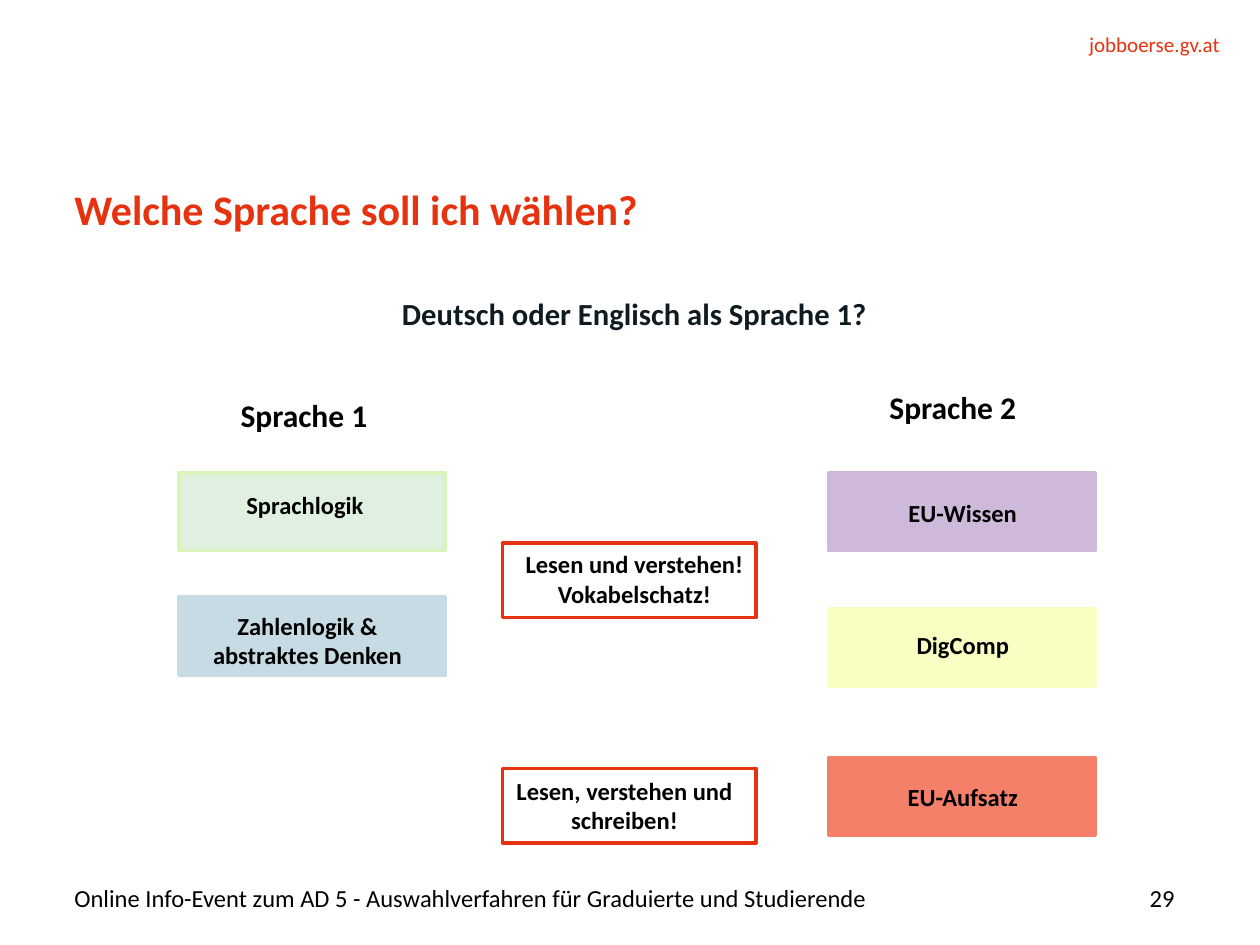
from pptx import Presentation
from pptx.dml.color import RGBColor
from pptx.enum.shapes import MSO_SHAPE
from pptx.enum.text import MSO_ANCHOR, MSO_AUTO_SIZE, PP_ALIGN
from pptx.util import Cm, Pt

RED, BLACK = "E6320F", "000000"
LEFT, CENTER, RIGHT = PP_ALIGN.LEFT, PP_ALIGN.CENTER, PP_ALIGN.RIGHT


def rgb(color):
    return RGBColor.from_string(color)


def put_text(sp, text, size, color=BLACK, bold=True, align=LEFT, inset=True,
             anchor=MSO_ANCHOR.TOP, grow=False):
    tf = sp.text_frame
    frame = {"word_wrap": True, "vertical_anchor": anchor,
             "auto_size": MSO_AUTO_SIZE.SHAPE_TO_FIT_TEXT if grow else MSO_AUTO_SIZE.NONE}
    if not inset:
        frame.update({f"margin_{side}": 0 for side in ("left", "top", "right", "bottom")})
    for name, value in frame.items():
        setattr(tf, name, value)
    tf.text = text
    for p in tf.paragraphs:
        p.alignment = align
        for r in p.runs:
            for name, value in {"name": "Calibri", "size": Pt(size), "bold": bold}.items():
                setattr(r.font, name, value)
            r.font.color.rgb = rgb(color)
    return tf


prs = Presentation()
prs.slide_width, prs.slide_height = Cm(25.4), Cm(19.05)
s = prs.slides.add_slide(prs.slide_layouts[5])

# Title
title = s.shapes.title
title.left, title.top, title.width, title.height = Cm(1.5), Cm(3.66), Cm(22.17), Cm(2.31)
tf = put_text(title, "Welche Sprache soll ich wählen?", 24, RED, inset=False)
tf.paragraphs[0].line_spacing = Pt(30)

# Header and footer
for text, x, y, w, h, size, color, align, anchor in [
    ("jobboerse.gv.at", 18.47, 0.64, 6.12, 0.51, 12, RED, RIGHT, MSO_ANCHOR.TOP),
    ("29", 21.01, 17.73, 2.67, 0.74, 14, BLACK, RIGHT, MSO_ANCHOR.MIDDLE),
    ("Online Info-Event zum AD 5 - Auswahlverfahren für Graduierte und Studierende",
     1.5, 17.73, 19.1, 0.74, 14, BLACK, LEFT, MSO_ANCHOR.MIDDLE),
]:
    sp = s.shapes.add_textbox(Cm(x), Cm(y), Cm(w), Cm(h))
    put_text(sp, text, size, color, False, align, inset=False, anchor=anchor)

# Question, in the first of two text columns
sp = s.shapes.add_textbox(Cm(7.9), Cm(5.94), Cm(19.58), Cm(1.5))
tf = put_text(sp, "Deutsch oder Englisch als Sprache 1?", 17.5, "0F1B20", align=CENTER,
              inset=False)
tf.paragraphs[0].space_after = Pt(14.2)
tf._txBody.bodyPr.set("numCol", "2")

# Column headings
for text, x, y in [("Sprache 1", 4.6, 7.85), ("Sprache 2", 17.68, 7.7)]:
    put_text(s.shapes.add_textbox(Cm(x), Cm(y), Cm(7.47), Cm(1.02)), text, 18, grow=True)

# Test boxes and outlined hints
TEST, HINT = (5.36, 1.57), (5.11, 1.5)
for x, y, (w, h), fill, line in [
    (3.61, 9.53, TEST, "DFF0E0", "D9F4BA"),
    (3.61, 12.04, TEST, "C6DBE4", "C6DBE4"),
    (16.71, 9.53, TEST, "CEB9DB", "CEB9DB"),
    (16.71, 12.27, TEST, "F9FFC2", "F9FFC2"),
    (16.71, 15.27, TEST, "F5806A", "F5806A"),
    (10.13, 10.95, HINT, None, RED),
    (10.13, 15.49, HINT, None, RED),
]:
    sp = s.shapes.add_shape(MSO_SHAPE.RECTANGLE, Cm(x), Cm(y), Cm(w), Cm(h))
    sp.shadow.inherit = False
    if fill:
        sp.fill.solid()
        sp.fill.fore_color.rgb = rgb(fill)
    else:
        sp.fill.background()
    sp.line.color.rgb = rgb(line)
    sp.line.width = Pt(2.08)

# Labels on the boxes
for text, x, y, w, h in [
    ("Sprachlogik", 3.94, 9.75, 4.42, 0.86),
    ("Zahlenlogik & abstraktes Denken", 3.99, 12.19, 4.42, 1.45),
    ("EU-Wissen", 17.2, 9.91, 4.42, 0.86),
    ("DigComp", 17.2, 12.57, 4.42, 0.86),
    ("EU-Aufsatz", 17.2, 15.65, 4.42, 0.86),
    ("Lesen und verstehen!\nVokabelschatz!", 9.5, 10.95, 6.58, 1.45),
    ("Lesen, verstehen und schreiben!", 9.3, 15.52, 6.58, 1.45),
]:
    sp = s.shapes.add_textbox(Cm(x), Cm(y), Cm(w), Cm(h))
    put_text(sp, text, 14, align=CENTER, grow=True)

prs.save("out.pptx")
